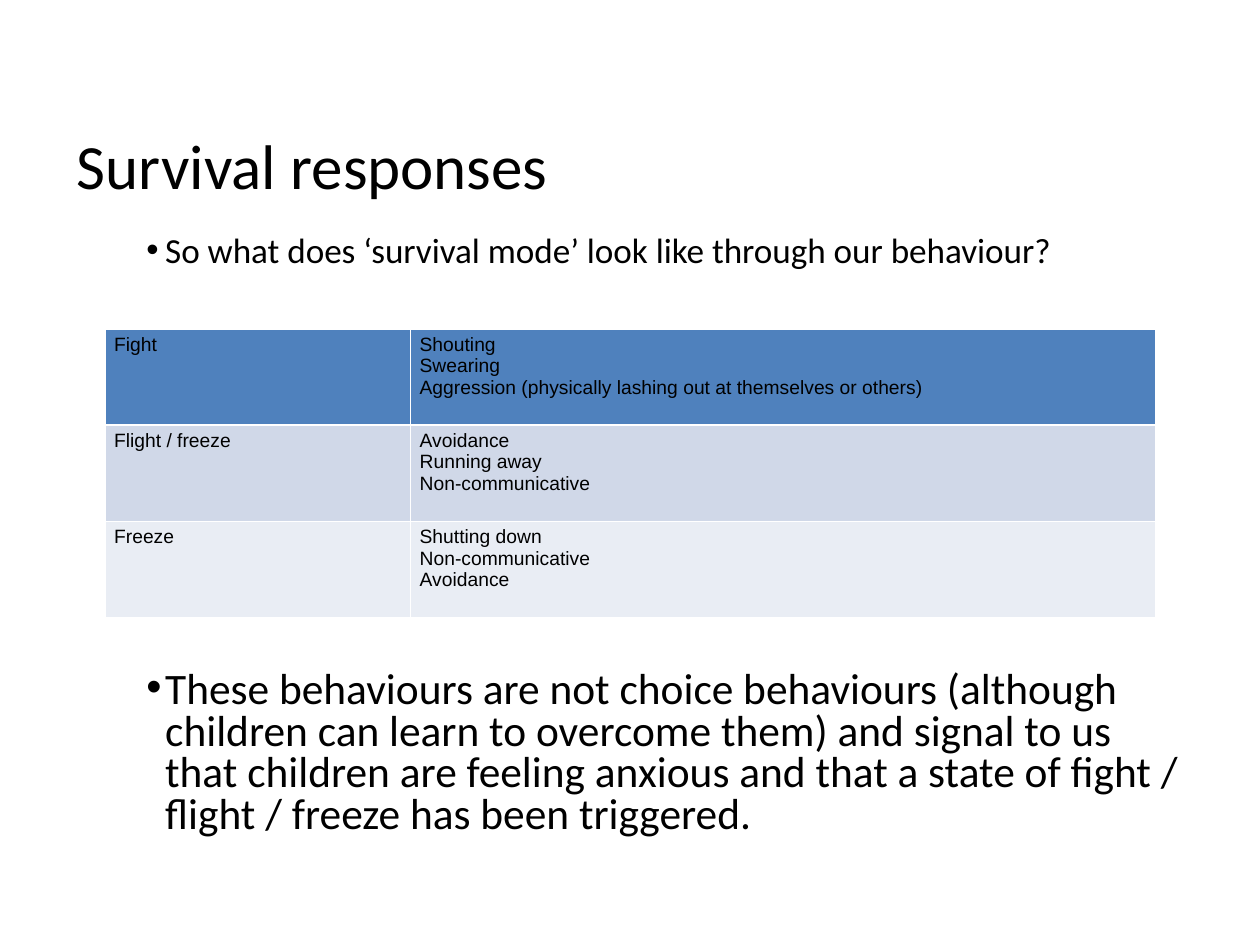
from pptx import Presentation
from pptx.dml.color import RGBColor
from pptx.enum.text import MSO_ANCHOR, MSO_AUTO_SIZE, PP_ALIGN
from pptx.oxml.ns import qn
from pptx.util import Cm, Pt
from lxml.etree import SubElement

COLOURS = {"text": "000000", "header": "4F81BD", "band": "D0D8E8", "light": "E9EDF4"}


def style_font(para, name, size):
    para.font.name = name
    para.font.size = Pt(size)
    para.font.bold = False
    para.font.color.rgb = RGBColor.from_string(COLOURS["text"])


def place_box(box, left, top, width, height):
    box.left, box.top, box.width, box.height = Cm(left), Cm(top), Cm(width), Cm(height)
    frame = box.text_frame
    frame.word_wrap = True
    frame.auto_size = MSO_AUTO_SIZE.NONE
    frame.margin_left = frame.margin_right = Cm(0.25)
    frame.margin_top = frame.margin_bottom = Cm(0.25)
    return frame


deck = Presentation()
deck.slide_width, deck.slide_height = Cm(25.4), Cm(19.05)
page = deck.slides.add_slide(deck.slide_layouts[1])

# Title
title = place_box(page.shapes.title, 1.3, 1.73, 20.19, 3.18)
title.vertical_anchor = MSO_ANCHOR.MIDDLE
title.text = "Survival responses"
title.paragraphs[0].alignment = PP_ALIGN.LEFT
style_font(title.paragraphs[0], "Calibri", 36)

# Bullets above and below the table: text, size, space before
bullets = [
    ("So what does ‘survival mode’ look like through our behaviour?", 20.1, 0),
    ("These behaviours are not choice behaviours (although children can learn to "
     "overcome them) and signal to us that children are feeling anxious and that "
     "a state of fight / flight / freeze has been triggered.", 24.8, 229),
]
body = place_box(page.placeholders[1], 2.11, 4.52, 22.02, 12.5)
body.vertical_anchor = MSO_ANCHOR.TOP
body.text = "\n".join(text for text, _, _ in bullets)
for para, (_, size, gap) in zip(body.paragraphs, bullets):
    para.line_spacing = 0.8
    para.space_before = Pt(gap)
    properties = para._p.get_or_add_pPr()
    properties.set("marL", str(Cm(0.97)))
    properties.set("indent", str(Cm(-0.38)))
    SubElement(properties, qn("a:buFont")).set("typeface", "Arial")
    SubElement(properties, qn("a:buChar")).set("char", "•")
    style_font(para, "Calibri", size)

# Table of responses and behaviours
responses = [
    ("header", "Fight", ["Shouting", "Swearing",
                         "Aggression (physically lashing out at themselves or others)"]),
    ("band", "Flight / freeze", ["Avoidance", "Running away", "Non-communicative"]),
    ("light", "Freeze", ["Shutting down", "Non-communicative", "Avoidance"]),
]
table = page.shapes.add_table(3, 2, Cm(2.12), Cm(6.63), Cm(21.18), Cm(5.82)).table
for column, width in zip(table.columns, (6.16, 15.02)):
    column.width = Cm(width)
for row, (fill, response, behaviours) in zip(table.rows, responses):
    row.height = Cm(1.94)
    for cell, text in zip(row.cells, (response, "\n".join(behaviours))):
        cell.text = text
        cell.fill.solid()
        cell.fill.fore_color.rgb = RGBColor.from_string(COLOURS[fill])
        cell.margin_left = cell.margin_right = Cm(0.18)
        cell.margin_top = cell.margin_bottom = Cm(0.1)
        for para in cell.text_frame.paragraphs:
            style_font(para, "Arial", 11)

deck.save("out.pptx")
